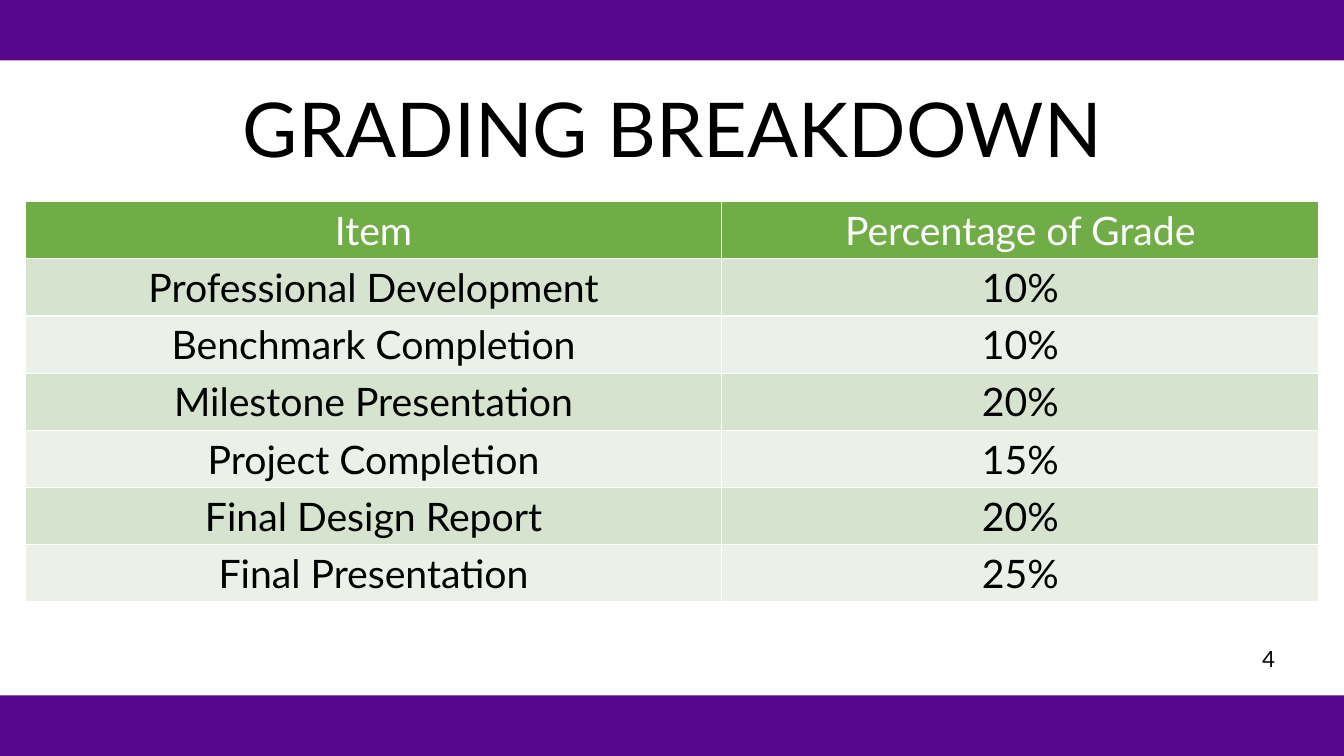
import pptx
import pptx.util
import pptx.dml.color
import pptx.enum.shapes
import pptx.enum.text

PX = 9144
FONT = "Lato"
COLORS = {
    "purple": "57068C",
    "green": "70AD47",
    "dark_band": "D5E3CF",
    "light_band": "EBF1E9",
    "black": "000000",
    "white": "FFFFFF",
}
GRADES = [
    ("Item", "Percentage of Grade"),
    ("Professional Development", "10%"),
    ("Benchmark Completion", "10%"),
    ("Milestone Presentation", "20%"),
    ("Project Completion", "15%"),
    ("Final Design Report", "20%"),
    ("Final Presentation", "25%"),
]


def emu(*lengths):
    return [pptx.util.Emu(length * PX) for length in lengths]


def rgb(name):
    return pptx.dml.color.RGBColor.from_string(COLORS[name])


def write_text(frame, text, size, color="black", align="CENTER", spacing=1.0):
    paragraph = frame.paragraphs[0]
    paragraph.alignment = getattr(pptx.enum.text.PP_ALIGN, align)
    paragraph.line_spacing = spacing
    run = paragraph.add_run()
    run.text = text
    run.font.name = FONT
    run.font.size = pptx.util.Pt(size)
    run.font.bold = False
    run.font.color.rgb = rgb(color)


def add_band(slide, box):
    band = slide.shapes.add_shape(pptx.enum.shapes.MSO_SHAPE.RECTANGLE, *emu(*box))
    band.shadow.inherit = False
    band.fill.solid()
    band.fill.fore_color.rgb = rgb("purple")
    band.line.fill.background()


def add_title(slide, box, text):
    title = slide.shapes.title
    title.left, title.top, title.width, title.height = emu(*box)
    title.text_frame.vertical_anchor = pptx.enum.text.MSO_ANCHOR.MIDDLE
    title.text_frame.word_wrap = True
    write_text(title.text_frame, text, 54, spacing=0.9)


def add_grade_table(slide, box, column_widths, rows):
    graphic = slide.shapes.add_table(len(rows), len(column_widths), *emu(*box))
    table = graphic.table
    for column, width in zip(table.columns, emu(*column_widths)):
        column.width = width
    for row_index, values in enumerate(rows):
        if row_index == 0:
            fill, color = "green", "white"
        else:
            fill = "dark_band" if row_index % 2 else "light_band"
            color = "black"
        for column_index, value in enumerate(values):
            cell = table.cell(row_index, column_index)
            cell.fill.solid()
            cell.fill.fore_color.rgb = rgb(fill)
            write_text(cell.text_frame, value, 28, color)


def add_slide_number(slide, box, number):
    label = slide.shapes.add_textbox(*emu(*box))
    label.text_frame.word_wrap = False
    write_text(label.text_frame, number, 16, align="LEFT")


def main():
    presentation = pptx.Presentation()
    presentation.slide_width, presentation.slide_height = emu(1333, 750)
    slide = presentation.slides.add_slide(presentation.slide_layouts[5])
    for top in (0, 690):
        add_band(slide, (0, top, 1333, 60))
    add_slide_number(slide, (1242, 635, 51, 37), "4")
    add_title(slide, (92, 59, 1150, 145), "GRADING BREAKDOWN")
    add_grade_table(slide, (25, 200, 1283, 397), (691, 592), GRADES)
    presentation.save("out.pptx")


if __name__ == "__main__":
    main()
